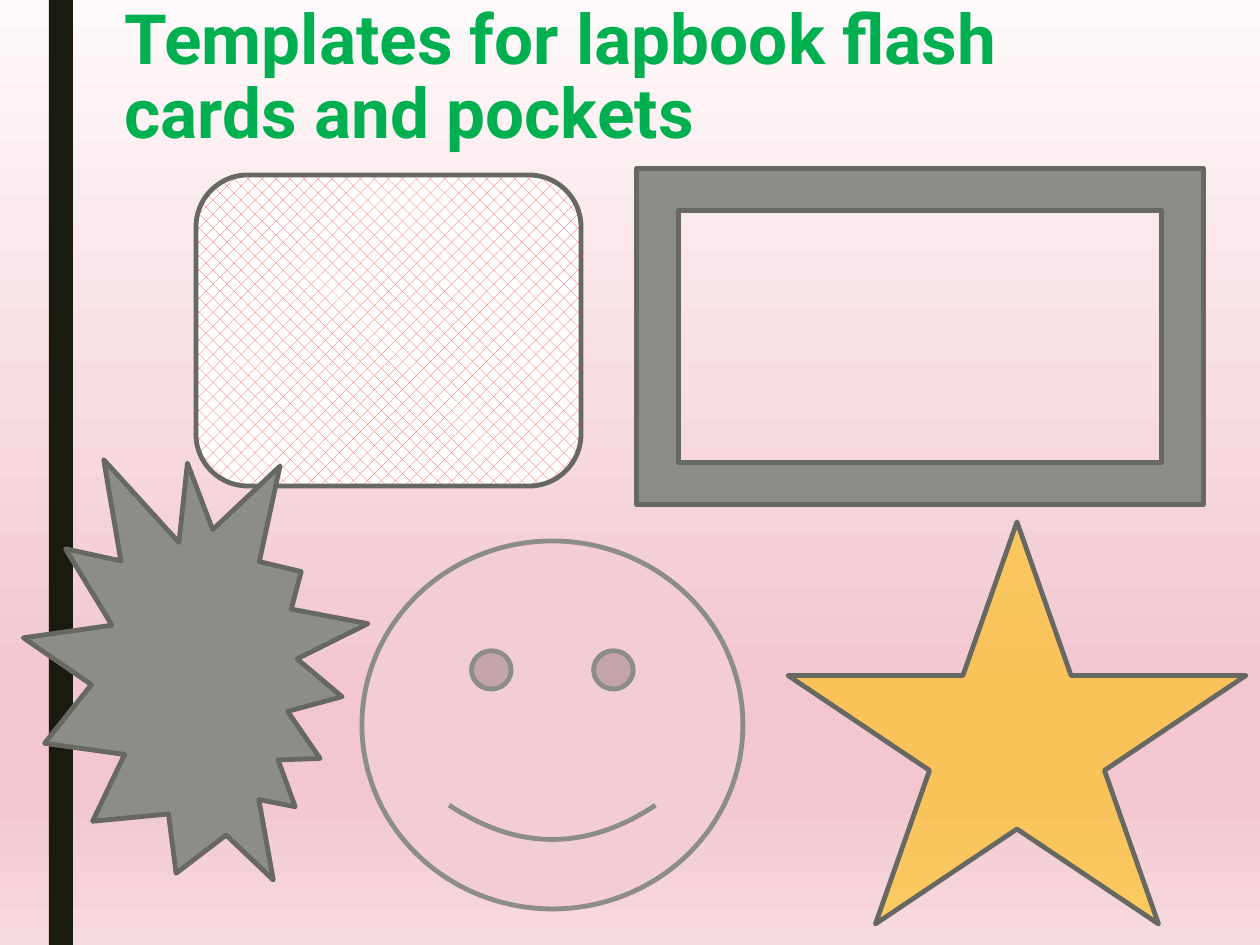
import copy
from dataclasses import dataclass

import pptx
import pptx.dml.color
import pptx.enum.dml
import pptx.enum.shapes
import pptx.enum.text
import pptx.oxml
import pptx.oxml.ns
import pptx.util

SHAPE = pptx.enum.shapes.MSO_SHAPE
EMU_PER_PX = 914400 / 126


def px(length):
    return pptx.util.Emu(round(length * EMU_PER_PX))


def rgb(value):
    return pptx.dml.color.RGBColor.from_string(value)


@dataclass(frozen=True)
class Theme:
    font: str = "Roboto"
    title_size: float = 39.6
    title_color: str = "00B050"
    bar: str = "191B0E"
    gray: str = "8C8D86"
    outline: str = "686863"
    outline_width: float = 2.75
    hatch: str = "FF5050"
    paper: str = "FFFFFF"
    gold: str = "FFC000"
    pink: str = "F3CDD4"
    backdrop: tuple = ((0, "FEF9FA"), (74, "F2C7CF"), (83, "F2C7CF"), (100, "F6DADF"))


class SlideBuilder:
    def __init__(self, page, theme):
        self.page = page
        self.theme = theme

    def background(self):
        fill = self.page.background.fill
        fill.gradient()
        fill.gradient_angle = 270
        stop_list = self.page.element.xpath(".//p:bg//a:gsLst")[0]
        while len(stop_list) < len(self.theme.backdrop):
            stop_list.append(copy.deepcopy(stop_list[0]))
        for stop, (percent, color) in zip(fill.gradient_stops, self.theme.backdrop):
            stop.color.rgb = rgb(color)
            stop.position = percent / 100

    def title(self, text, left, top, width, height):
        box = self.page.shapes.title
        box.left, box.top, box.width, box.height = map(px, (left, top, width, height))
        frame = box.text_frame
        frame.word_wrap = True
        frame.auto_size = pptx.enum.text.MSO_AUTO_SIZE.NONE
        frame.vertical_anchor = pptx.enum.text.MSO_ANCHOR.MIDDLE
        para = frame.paragraphs[0]
        para.text = text
        para.alignment = pptx.enum.text.PP_ALIGN.LEFT
        para.line_spacing = 0.89
        para.font.name = self.theme.font
        para.font.size = pptx.util.Pt(self.theme.title_size)
        para.font.bold = True
        para.font.color.rgb = rgb(self.theme.title_color)

    def shape(self, kind, left, top, width, height, fill, line=None, rotation=0):
        shape = self.page.shapes.add_shape(kind, *map(px, (left, top, width, height)))
        shape.shadow.inherit = False
        shape.rotation = rotation
        shape.fill.solid()
        shape.fill.fore_color.rgb = rgb(fill)
        if line:
            shape.line.color.rgb = rgb(line)
            shape.line.width = pptx.util.Pt(self.theme.outline_width)
        else:
            shape.line.fill.background()
        return shape

    def hatch(self, shape):
        shape.fill.patterned()
        shape.fill.pattern = pptx.enum.dml.MSO_PATTERN.PERCENT_25
        shape.fill.fore_color.rgb = rgb(self.theme.hatch)
        shape.fill.back_color.rgb = rgb(self.theme.paper)

    def opacity(self, shape, percent):
        color = shape.element.spPr.xpath("./a:solidFill/a:srgbClr")[0]
        alpha = pptx.oxml.parse_xml(
            f'<a:alpha {pptx.oxml.ns.nsdecls("a")} val="{percent * 1000}"/>')
        color.append(alpha)


def main():
    deck = pptx.Presentation()
    deck.slide_width, deck.slide_height = px(1260), px(945)
    theme = Theme()
    builder = SlideBuilder(deck.slides.add_slide(deck.slide_layouts[5]), theme)

    # Backdrop, side bar and title
    builder.background()
    builder.shape(SHAPE.RECTANGLE, 49, 0, 24, 945, theme.bar)
    builder.title("Templates for lapbook flash \vcards and pockets", 112, 0, 1134, 158)

    # Card and frame
    card = builder.shape(SHAPE.FLOWCHART_ALTERNATE_PROCESS, 196, 175, 385, 311,
                         theme.paper, theme.outline)
    builder.hatch(card)
    builder.shape(SHAPE.FRAME, 752, 53, 336, 567, theme.gray, theme.outline, 270)

    # Star, smiley and burst
    star = builder.shape(SHAPE.STAR_5_POINT, 788, 522, 458, 402, theme.gold, theme.outline)
    builder.opacity(star, 56)
    builder.shape(SHAPE.SMILEY_FACE, 362, 541, 381, 368, theme.pink, theme.gray)
    builder.shape(SHAPE.EXPLOSION2, 9, 449, 383, 418, theme.gray, theme.outline, 315.3)

    deck.save("out.pptx")


if __name__ == "__main__":
    main()
